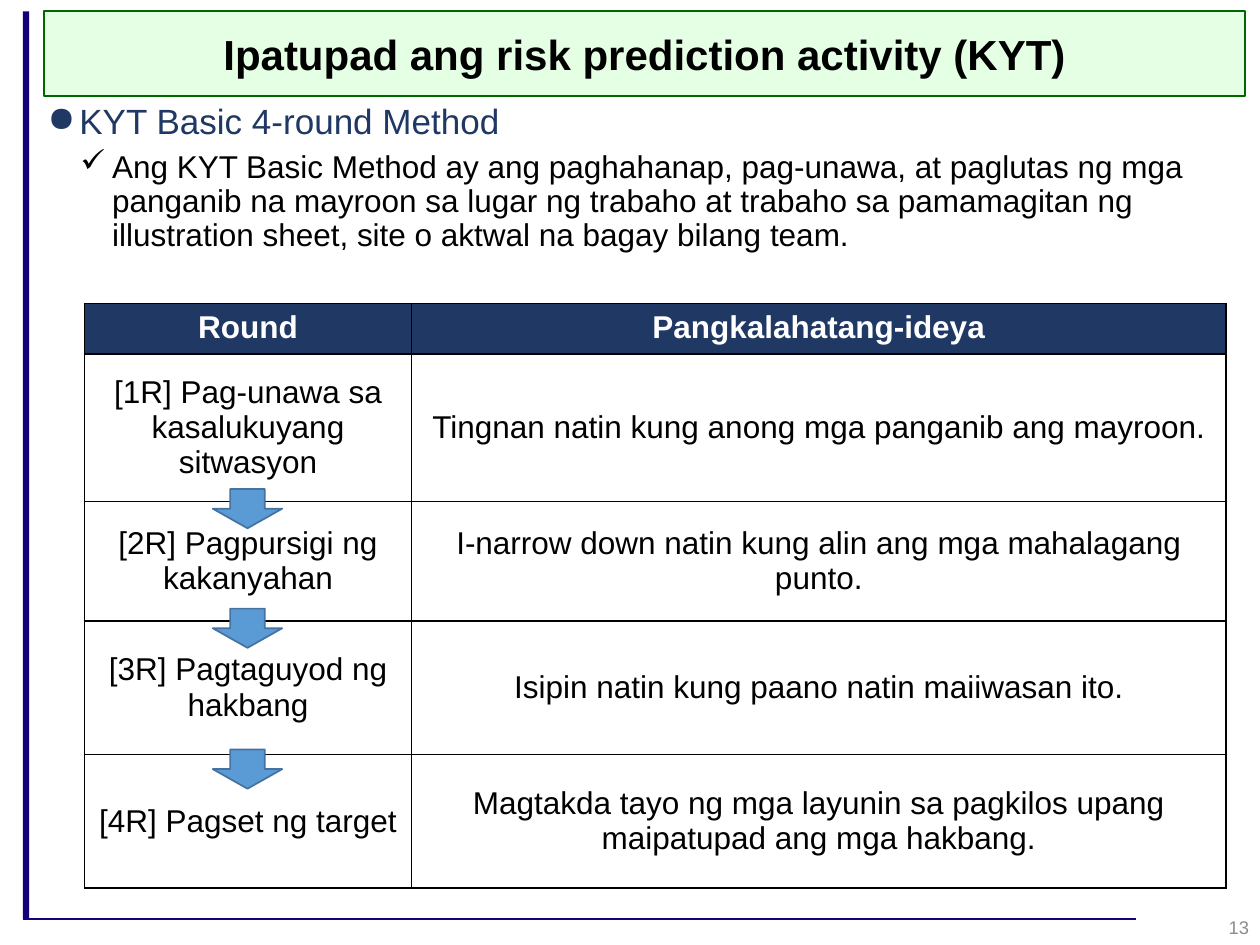
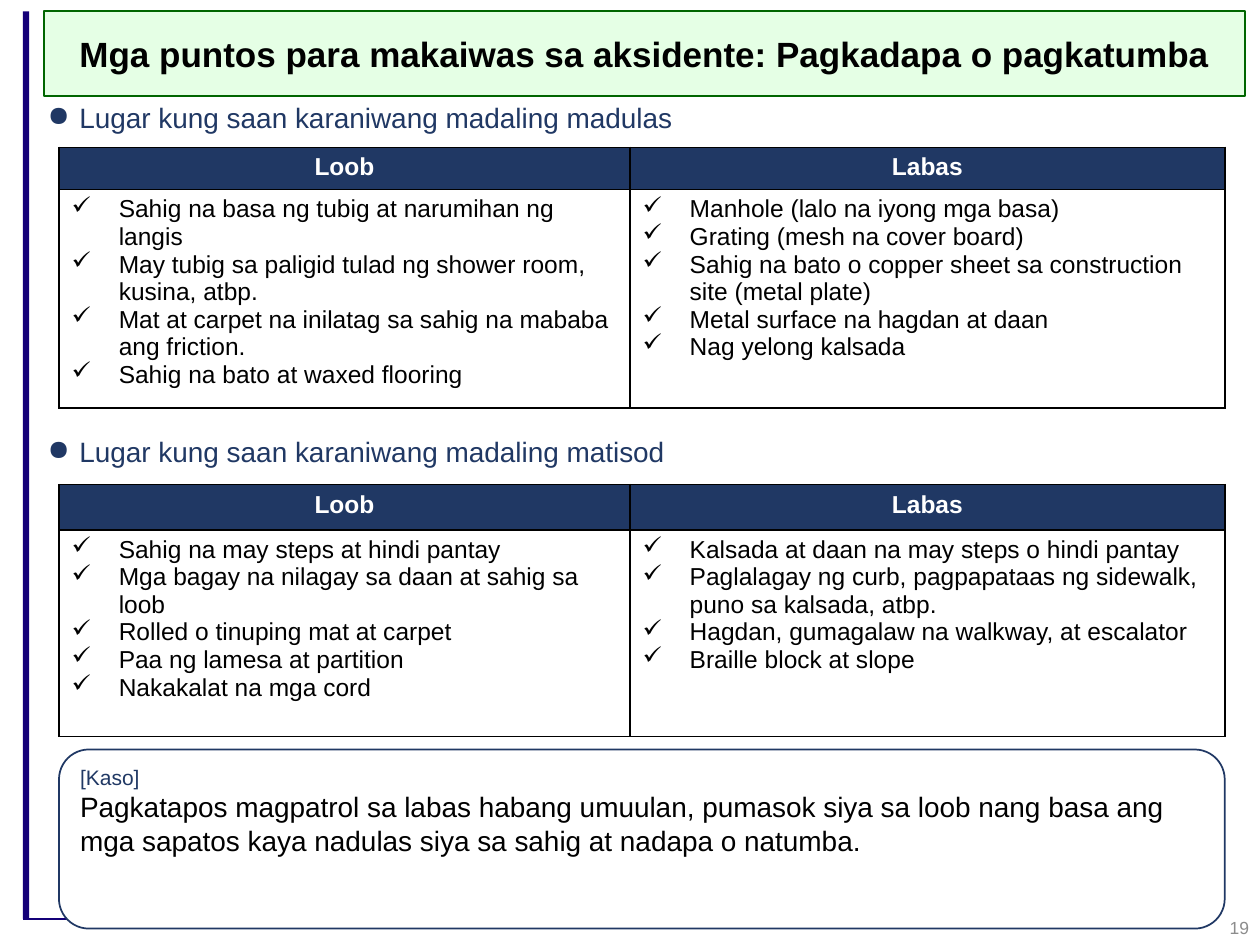
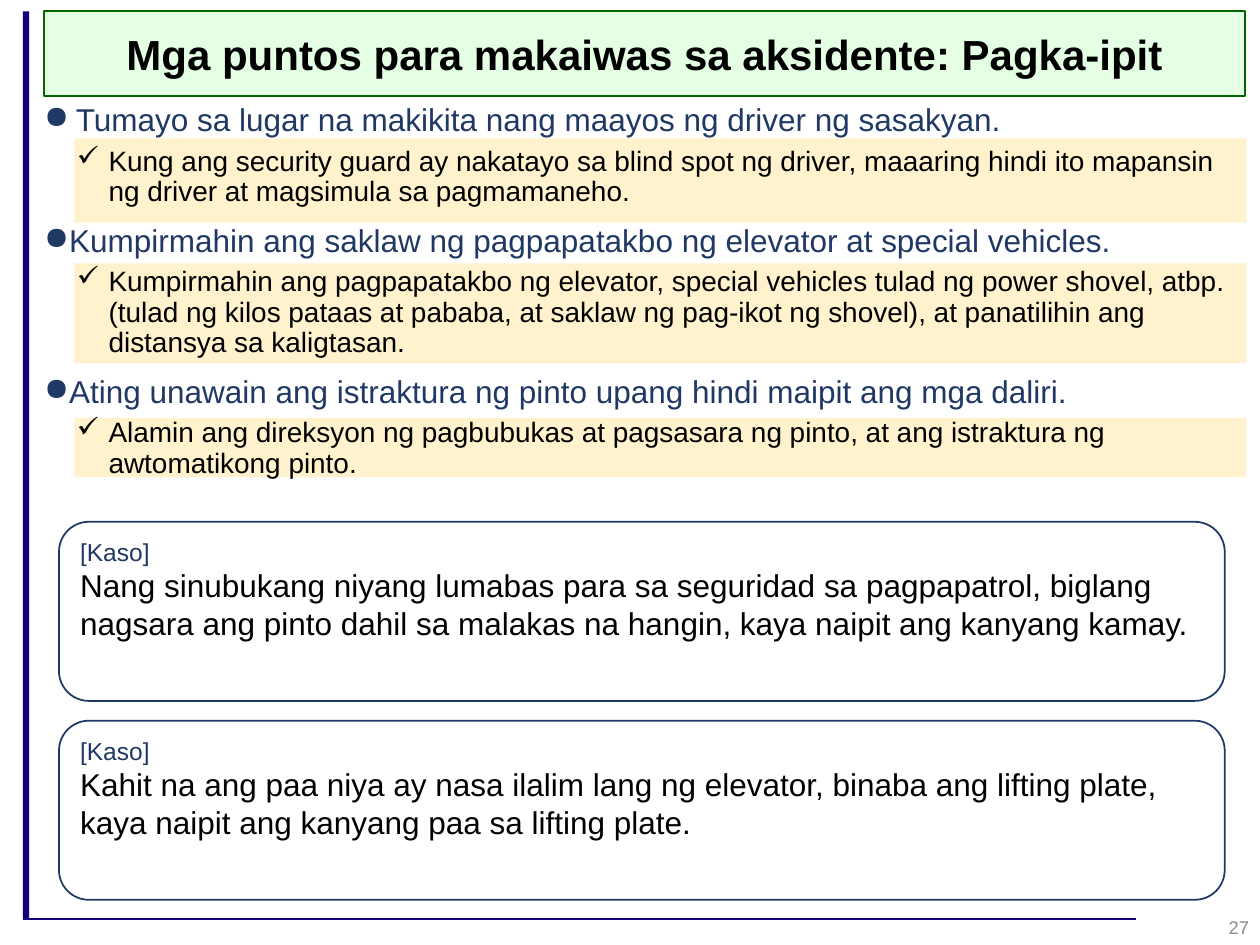
from lxml.etree import SubElement as Sub
from pptx import Presentation
from pptx.dml.color import RGBColor
from pptx.enum.shapes import MSO_CONNECTOR as Link, MSO_SHAPE as Kind
from pptx.enum.text import MSO_ANCHOR as Anchor, PP_ALIGN as Align
from pptx.oxml.ns import qn
from pptx.util import Cm, Pt

NAVY = RGBColor(0x20, 0x38, 0x64)
INDIGO = RGBColor(0x14, 0x00, 0x78)
MINT = RGBColor(0xCC, 0xFF, 0xCC)
GREEN = RGBColor(0x00, 0x66, 0x00)
CREAM = RGBColor(0xFF, 0xF2, 0xCC)
BLUE = RGBColor(0x5B, 0x9B, 0xD5)
STEEL = RGBColor(0x43, 0x73, 0x9E)
GRAY = RGBColor(0x8C, 0x8C, 0x8C)
BLACK = RGBColor(0, 0, 0)
WHITE = RGBColor(255, 255, 255)
FONT = "Arial"
WIDE, HIGH = 25.4, 19.05
LEFT, SPAN = 1.19, 23.5


def write(frame, text, size, hue=BLACK, bold=False, align=Align.LEFT):
    first = frame.paragraphs[0]
    para = frame.add_paragraph() if first.text else first
    para.text = text
    para.alignment = align
    font = para.font
    font.name, font.size, font.bold = FONT, Pt(size), bold
    font.color.rgb = hue
    return para


def mark(para, sign, left, hang):
    props = para._p.get_or_add_pPr()
    props.set("marL", str(Cm(left)))
    props.set("indent", str(-Cm(hang)))
    bullet = props.makeelement(qn("a:buChar"), {"char": sign})
    props.find(qn("a:defRPr")).addprevious(bullet)


def point(frame, text, size, left=0.64):
    para = write(frame, text, size, NAVY)
    para.line_spacing, para.space_before = 0.9, Pt(10)
    mark(para, "●", left, 0.64)


def detail(frame, text, size):
    para = write(frame, text, size)
    para.level = 1
    para.line_spacing, para.space_before = 0.9, Pt(5)
    mark(para, "✓", 1.3, 0.64)


def shape(slide, kind, box, fill, line=None):
    item = slide.shapes.add_shape(kind, *map(Cm, box))
    item.shadow.inherit = False
    item.fill.solid()
    item.fill.fore_color.rgb = fill
    if line is None:
        item.line.fill.background()
    else:
        item.line.color.rgb = line
        item.line.width = Pt(1)
    return item


def area(slide, left, top, width, height):
    frame = slide.shapes.add_textbox(*map(Cm, (left, top, width, height))).text_frame
    frame.word_wrap = True
    return frame


def base(deck):
    slide = deck.slides.add_slide(deck.slide_layouts[6])
    shape(slide, Kind.RECTANGLE, (0.46, 0.23, 0.13, 18.29), INDIGO)
    rule = slide.shapes.add_connector(
        Link.STRAIGHT, Cm(0.46), Cm(18.52), Cm(22.91), Cm(18.52))
    rule.line.color.rgb = INDIGO
    rule.line.width = Pt(1)
    Sub(rule._element.spPr, qn("a:effectLst"))
    return slide


def title(slide, text, size):
    band = shape(slide, Kind.RECTANGLE, (0.89, 0.23, 24.21, 1.7), MINT, GREEN)
    tint = band._element.spPr.find(qn("a:solidFill"))[0]
    Sub(tint, qn("a:alpha"), val="50000")
    frame = band.text_frame
    frame.word_wrap = True
    frame.vertical_anchor = Anchor.MIDDLE
    write(frame, text, size, bold=True, align=Align.CENTER)


def number(slide, text, size=10.5):
    frame = area(slide, 19.71, 18.19, 5.72, 1.02)
    frame.vertical_anchor = Anchor.MIDDLE
    write(frame, text, size, GRAY, align=Align.RIGHT)


def paint(cell, fill):
    props = cell._tc.get_or_add_tcPr()
    for side in ("lnL", "lnR", "lnT", "lnB"):
        edge = Sub(props, qn(f"a:{side}"), w=str(Pt(1)))
        ink = Sub(edge, qn("a:solidFill"))
        Sub(ink, qn("a:srgbClr"), val=str(BLACK))
    cell.fill.solid()
    cell.fill.fore_color.rgb = fill


def grid(slide, left, top, cols, rows, heads, size):
    table = slide.shapes.add_table(
        len(rows), len(cols), Cm(left), Cm(top), Cm(sum(cols)), Cm(sum(rows))).table
    for col, width in zip(table.columns, cols):
        col.width = Cm(width)
    for row, height in zip(table.rows, rows):
        row.height = Cm(height)
    for index, cell in enumerate(table.iter_cells()):
        paint(cell, NAVY if index < len(heads) else WHITE)
    for cell, head in zip(table.rows[0].cells, heads):
        write(cell.text_frame, head, size, WHITE, True, Align.CENTER)
    return table


def rounds(slide, top, steps):
    rows = (0.97, 2.97, 2.41, 2.69, 2.69)
    table = grid(slide, 1.7, top, (6.6, 16.41), rows, ("Round", "Pangkalahatang-ideya"), 18)
    for row, step in enumerate(steps, 1):
        for col, text in enumerate(step):
            cell = table.cell(row, col)
            cell.vertical_anchor = Anchor.MIDDLE
            write(cell.text_frame, text, 18, align=Align.CENTER)


def places(slide, top, rows, lists):
    table = grid(slide, LEFT, top, (11.51, 11.99), rows, ("Loob", "Labas"), 14)
    for cell, lines in zip(table.rows[1].cells, lists):
        for line in lines:
            mark(write(cell.text_frame, line, 14), "✓", 0.95, 0.95)


def case(slide, top, text, size):
    box = shape(slide, Kind.ROUNDED_RECTANGLE, (LEFT, top, SPAN, 3.61), WHITE, NAVY)
    frame = box.text_frame
    frame.word_wrap = True
    frame.vertical_anchor = Anchor.TOP
    write(frame, "[Kaso]", size - 4, NAVY)
    write(frame, text, size)


def method(deck):
    slide = base(deck)
    title(slide, "Ipatupad ang risk prediction activity (KYT)", 24)
    frame = area(slide, 0.71, 1.98, 24.59, 3.6)
    point(frame, "KYT Basic 4-round Method", 20)
    detail(frame, "Ang KYT Basic Method ay ang paghahanap, pag-unawa, at paglutas ng mga "
           "panganib na mayroon sa lugar ng trabaho at trabaho sa pamamagitan ng "
           "illustration sheet, site o aktwal na bagay bilang team.", 18)
    rounds(slide, 6.12, (
        ("[1R] Pag-unawa sa kasalukuyang sitwasyon",
         "Tingnan natin kung anong mga panganib ang mayroon."),
        ("[2R] Pagpursigi ng kakanyahan",
         "I-narrow down natin kung alin ang mga mahalagang punto."),
        ("[3R] Pagtaguyod ng hakbang",
         "Isipin natin kung paano natin maiiwasan ito."),
        ("[4R] Pagset ng target",
         "Magtakda tayo ng mga layunin sa pagkilos upang maipatupad ang mga hakbang."),
    ))
    for top in (9.86, 12.27, 15.11):
        shape(slide, Kind.DOWN_ARROW, (4.29, top, 1.4, 0.79), BLUE, STEEL)
    number(slide, "13")


def falls(deck):
    slide = base(deck)
    title(slide, "Mga puntos para makaiwas sa aksidente: Pagkadapa o pagkatumba", 20)
    for top, text in (
        (1.98, "Lugar kung saan karaniwang madaling madulas"),
        (8.71, "Lugar kung saan karaniwang madaling matisod"),
    ):
        point(area(slide, 0.71, top, 24.59, 0.95), text, 16)
    places(slide, 2.97, (0.82, 4.14), (
        ("Sahig na basa ng tubig at narumihan ng langis",
         "May tubig sa paligid tulad ng shower room, kusina, atbp.",
         "Mat at carpet na inilatag sa sahig na mababa ang friction.",
         "Sahig na bato at waxed flooring"),
        ("Manhole (lalo na iyong mga basa)",
         "Grating (mesh na cover board)",
         "Sahig na bato o copper sheet sa construction site (metal plate)",
         "Metal surface na hagdan at daan",
         "Nag yelong kalsada"),
    ))
    places(slide, 9.77, (0.91, 4.17), (
        ("Sahig na may steps at hindi pantay",
         "Mga bagay na nilagay sa daan at sahig sa loob",
         "Rolled o tinuping mat at carpet",
         "Paa ng lamesa at partition",
         "Nakakalat na mga cord"),
        ("Kalsada at daan na may steps o hindi pantay",
         "Paglalagay ng curb, pagpapataas ng sidewalk, puno sa kalsada, atbp.",
         "Hagdan, gumagalaw na walkway, at escalator",
         "Braille block at slope"),
    ))
    case(slide, 15.11, "Pagkatapos magpatrol sa labas habang umuulan, pumasok siya sa loob "
         "nang basa ang mga sapatos kaya nadulas siya sa sahig at nadapa o natumba.", 16)
    number(slide, "19", 10)


def jams(deck):
    slide = base(deck)
    for top, height in ((2.79, 1.7), (5.31, 2.01), (8.43, 1.19)):
        shape(slide, Kind.RECTANGLE, (1.5, top, 23.62, height), CREAM)
    title(slide, "Mga puntos para makaiwas sa aksidente: Pagka-ipit", 24)
    frame = area(slide, 0.64, 1.98, 24.59, 7.8)
    for left, head, text in (
        (0.64, "Tumayo sa lugar na makikita nang maayos ng driver ng sasakyan.",
         "Kung ang security guard ay nakatayo sa blind spot ng driver, maaaring hindi ito "
         "mapansin ng driver at magsimula sa pagmamaneho."),
        (0.03, "Kumpirmahin ang saklaw ng pagpapatakbo ng elevator at special vehicles.",
         "Kumpirmahin ang pagpapatakbo ng elevator, special vehicles tulad ng power shovel, "
         "atbp. (tulad ng kilos pataas at pababa, at saklaw ng pag-ikot ng shovel), at "
         "panatilihin ang distansya sa kaligtasan."),
        (0.03, "Ating unawain ang istraktura ng pinto upang hindi maipit ang mga daliri.",
         "Alamin ang direksyon ng pagbubukas at pagsasara ng pinto, at ang istraktura ng "
         "awtomatikong pinto."),
    ):
        point(frame, head, 18, left)
        detail(frame, text, 16)
    case(slide, 10.52, "Nang sinubukang niyang lumabas para sa seguridad sa pagpapatrol, "
         "biglang nagsara ang pinto dahil sa malakas na hangin, kaya naipit ang kanyang "
         "kamay.", 18)
    case(slide, 14.53, "Kahit na ang paa niya ay nasa ilalim lang ng elevator, binaba ang "
         "lifting plate, kaya naipit ang kanyang paa sa lifting plate.", 18)
    number(slide, "27")


def main():
    deck = Presentation()
    deck.slide_width, deck.slide_height = Cm(WIDE), Cm(HIGH)
    method(deck)
    falls(deck)
    jams(deck)
    deck.save("out.pptx")


if __name__ == "__main__":
    main()
